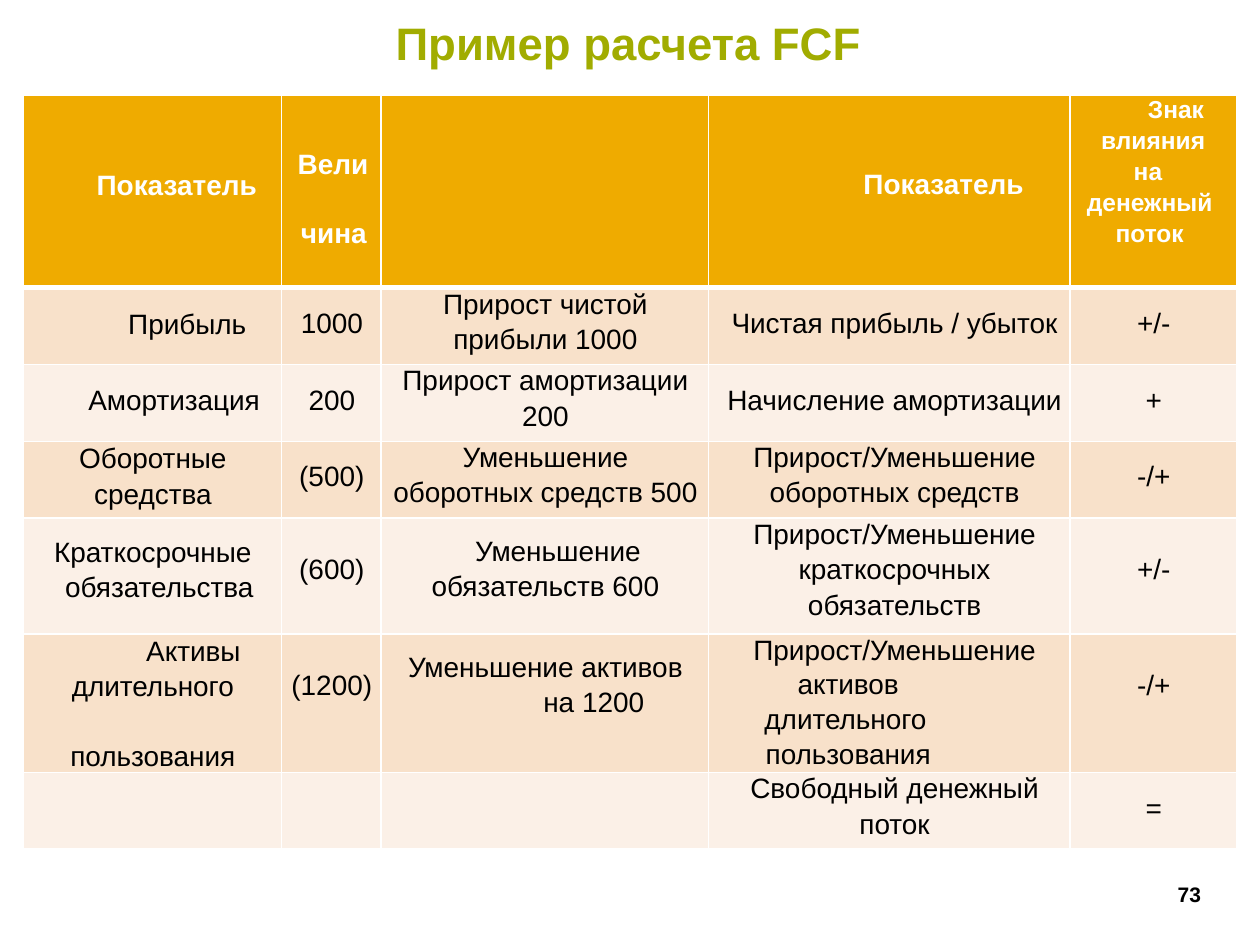
from dataclasses import dataclass

from lxml import etree
from pptx import Presentation
from pptx.dml.color import RGBColor
from pptx.enum.text import MSO_ANCHOR, MSO_AUTO_SIZE, PP_ALIGN
from pptx.oxml.ns import qn
from pptx.util import Pt

CENTER, LEFT = PP_ALIGN.CENTER, PP_ALIGN.LEFT
TOP, NO_FIT = MSO_ANCHOR.TOP, MSO_AUTO_SIZE.NONE

FONT = "Arial"
WHITE, BLACK, OLIVE, ORANGE = "FFFFFF", "000000", "A1AC00", "EFAB00"
BANDS = ("F8E1CA", "FBF0E7")
LINE_GAP, SKIPPED_LINE = 2.4, 22
MIDDLE = 11.7  # top margin that centres one line in a two-line row

COLUMN_WIDTHS = (147.6, 56.9, 187.2, 206.6, 95)
ROW_HEIGHTS = (110.2, 43.9, 43.9, 43.9, 66.2, 66.2, 43.9)


@dataclass(frozen=True)
class Line:
    text: str
    indent: float = 0.7  # left indent; a negative value indents from the right
    gap: float = LINE_GAP


@dataclass(frozen=True)
class Entry:
    lines: tuple[Line, ...] = ()
    top: float = 0.7
    size: float = 16


def entry(*texts: str, top: float = 0.7, indent: float = 0.7) -> Entry:
    return Entry(tuple(Line(text, indent) for text in texts), top)


def effect(*texts: str, top: float = 0.7) -> Entry:
    return entry(*texts, top=top, indent=6)


HEADER = (
    entry("Показатель", top=43, indent=28),
    Entry((Line("Вели", 2), Line("чина", 3, SKIPPED_LINE)), 31),
    Entry(),
    entry("Показатель", top=42.5, indent=62),
    Entry((Line("Знак", 26), Line("влияния", 0, 2), Line("на", -6, 2),
           Line("денежный", 2, 2), Line("поток", 2, 2)), size=14),
)
BODY = (
    (entry("Прибыль", top=12.2, indent=40), entry("1000", top=MIDDLE),
     entry("Прирост чистой", "прибыли 1000"),
     effect("Чистая прибыль / убыток", top=MIDDLE), entry("+/-", top=MIDDLE)),
    (entry("Амортизация", top=12.2, indent=25), entry("200", top=MIDDLE),
     entry("Прирост амортизации", "200"),
     effect("Начисление амортизации", top=MIDDLE), entry("+", top=MIDDLE)),
    (entry("Оборотные", "средства", top=1.4), entry("(500)", top=MIDDLE),
     entry("Уменьшение", "оборотных средств 500"),
     effect("Прирост/Уменьшение", "оборотных средств"), entry("-/+", top=MIDDLE)),
    (Entry((Line("Краткосрочные"), Line("обязательства", 8)), 10.8),
     entry("(600)", top=20.5),
     Entry((Line("Уменьшение", 15), Line("обязательств 600")), 10.3),
     effect("Прирост/Уменьшение", "краткосрочных", "обязательств"),
     entry("+/-", top=20.5)),
    (Entry((Line("Активы", 47), Line("длительного"),
            Line("пользования", gap=SKIPPED_LINE)), 1.4),
     entry("(1200)", top=21),
     Entry((Line("Уменьшение активов"), Line("на 1200", 56)), 10.3),
     Entry((Line("Прирост/Уменьшение", 6), Line("активов", -47, 2),
            Line("длительного", -50, 2), Line("пользования", -47, 2))),
     entry("-/+", top=21)),
    (Entry(), Entry(), Entry(),
     effect("Свободный денежный", "поток"), entry("=", top=MIDDLE)),
)


def rgb(color: str) -> RGBColor:
    return RGBColor.from_string(color)


def set_font(paragraph, size: float, color: str, bold: bool) -> None:
    font = paragraph.font
    font.name, font.size, font.bold = FONT, Pt(size), bold
    font.color.rgb = rgb(color)


def clear_margins(frame) -> None:
    frame.margin_left = frame.margin_right = Pt(0)
    frame.margin_top = frame.margin_bottom = Pt(0)


def set_borders(cell, top: float, bottom: float) -> None:
    properties = cell._tc.get_or_add_tcPr()
    sides = (("a:lnL", 1), ("a:lnR", 1), ("a:lnT", top), ("a:lnB", bottom))
    for position, (tag, width) in enumerate(sides):
        border = etree.Element(qn(tag), w=str(int(Pt(width))))
        fill = etree.SubElement(border, qn("a:solidFill"))
        etree.SubElement(fill, qn("a:srgbClr"), val=WHITE)
        properties.insert(position, border)


def fill_cell(cell, content: Entry, color: str, background: str, bold: bool) -> None:
    cell.fill.solid()
    cell.fill.fore_color.rgb = rgb(background)
    cell.margin_left = cell.margin_right = cell.margin_bottom = Pt(0)
    cell.margin_top = Pt(content.top)
    cell.vertical_anchor = TOP
    frame = cell.text_frame
    for number, line in enumerate(content.lines):
        paragraph = frame.add_paragraph() if number else frame.paragraphs[0]
        paragraph.text = line.text
        paragraph.alignment = CENTER
        if number:
            paragraph.space_before = Pt(line.gap)
        side = "marL" if line.indent >= 0 else "marR"
        paragraph._p.get_or_add_pPr().set(side, str(int(Pt(abs(line.indent)))))
        set_font(paragraph, content.size, color, bold)


def add_title(slide) -> None:
    title = slide.shapes.title
    title.left, title.top, title.width, title.height = Pt(226), Pt(8.6), Pt(272), Pt(33)
    frame = title.text_frame
    frame.text = "Пример расчета FCF"
    clear_margins(frame)
    frame.auto_size, frame.vertical_anchor = NO_FIT, TOP
    frame.paragraphs[0].alignment = LEFT
    set_font(frame.paragraphs[0], 26, OLIVE, True)


def add_cash_flow_table(slide) -> None:
    rows = (HEADER, *BODY)
    table = slide.shapes.add_table(
        len(rows), len(HEADER), Pt(13.2), Pt(54.2),
        Pt(sum(COLUMN_WIDTHS)), Pt(sum(ROW_HEIGHTS))).table
    for column, width in zip(table.columns, COLUMN_WIDTHS):
        column.width = Pt(width)
    for r, (entries, height) in enumerate(zip(rows, ROW_HEIGHTS)):
        table.rows[r].height = Pt(height)
        is_header = r == 0
        background = ORANGE if is_header else BANDS[(r - 1) % 2]
        for c, content in enumerate(entries):
            cell = table.cell(r, c)
            fill_cell(cell, content, WHITE if is_header else BLACK, background, is_header)
            set_borders(cell, 3 if r == 1 else 1, 3 if is_header else 1)


def add_page_number(slide) -> None:
    frame = slide.shapes.add_textbox(Pt(671), Pt(504), Pt(20), Pt(14.4)).text_frame
    clear_margins(frame)
    frame.word_wrap = True
    paragraph = frame.paragraphs[0]
    paragraph.text = "73"
    paragraph.line_spacing = Pt(14.2)
    paragraph._p.get_or_add_pPr().set("marL", str(int(Pt(2))))
    set_font(paragraph, 12, BLACK, True)


def main() -> None:
    presentation = Presentation()
    presentation.slide_width, presentation.slide_height = Pt(720), Pt(540)
    slide = presentation.slides.add_slide(presentation.slide_layouts[5])
    add_title(slide)
    add_cash_flow_table(slide)
    add_page_number(slide)
    presentation.save("out.pptx")


if __name__ == "__main__":
    main()
